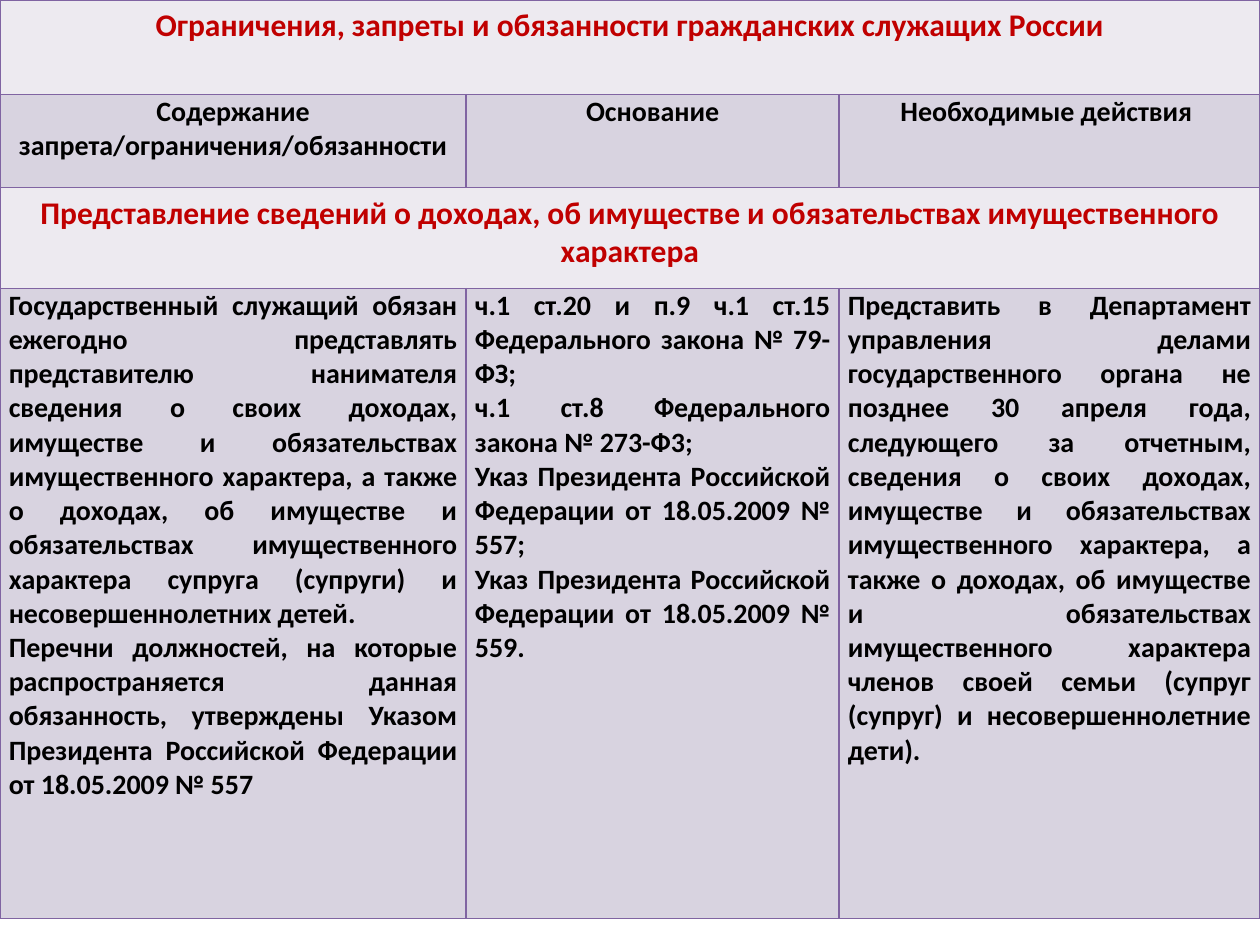
from dataclasses import dataclass

from lxml.etree import SubElement
from pptx import Presentation
from pptx.dml.color import RGBColor
from pptx.enum.text import PP_ALIGN
from pptx.oxml.ns import qn
from pptx.util import Inches, Pt

RED = RGBColor(0xC0, 0x00, 0x00)
BLACK = RGBColor(0x00, 0x00, 0x00)
PALE = RGBColor(0xED, 0xEA, 0xF0)
LILAC = RGBColor(0xD8, 0xD3, 0xE0)
PURPLE = RGBColor(0x80, 0x64, 0xA2)

WIDTHS = (3.7, 2.96, 3.34)
HEIGHTS = (0.75, 0.74, 0.8, 5)


@dataclass(frozen=True)
class Style:
    size: int
    color: RGBColor
    fill: RGBColor
    align: PP_ALIGN
    side: float
    top: float


BAND = Style(18, RED, PALE, PP_ALIGN.CENTER, 0.1, 0.05)
HEAD = Style(16, BLACK, LILAC, PP_ALIGN.CENTER, 0.07, 0)
BODY = Style(16, BLACK, LILAC, PP_ALIGN.JUSTIFY, 0.07, 0)

# A row with a single text spans the whole table.
ROWS = (
    (BAND, ("Ограничения, запреты и обязанности гражданских служащих России",)),
    (HEAD, ("Содержание запрета/ограничения/обязанности",
            "Основание",
            "Необходимые действия ")),
    (BAND, ("Представление сведений о доходах, об имуществе и обязательствах "
            "имущественного характера",)),
    (BODY, (
        "Государственный служащий обязан ежегодно представлять представителю "
        "нанимателя сведения о своих доходах, имуществе и обязательствах "
        "имущественного характера, а также о доходах, об имуществе и "
        "обязательствах имущественного характера супруга (супруги) и "
        "несовершеннолетних детей. \n"
        "Перечни должностей, на которые распространяется данная обязанность, "
        "утверждены Указом Президента Российской Федерации от 18.05.2009 № 557",
        "ч.1 ст.20 и п.9 ч.1 ст.15 Федерального закона № 79-ФЗ;\n"
        "ч.1 ст.8 Федерального закона № 273-Ф3; \n"
        "Указ Президента Российской Федерации от 18.05.2009 № 557;\n"
        "Указ Президента Российской Федерации от 18.05.2009 № 559.",
        "Представить в Департамент управления делами государственного органа "
        "не позднее 30 апреля года, следующего за отчетным, сведения о своих "
        "доходах, имуществе и обязательствах имущественного характера, а также "
        "о доходах, об имуществе и обязательствах имущественного характера "
        "членов своей семьи (супруг (супруг) и несовершеннолетние дети).")),
)


def add_border(cell) -> None:
    props = cell._tc.get_or_add_tcPr()
    for side in ("lnL", "lnR", "lnT", "lnB"):
        line = SubElement(props, qn(f"a:{side}"), w=str(Pt(1)))
        fill = SubElement(line, qn("a:solidFill"))
        SubElement(fill, qn("a:srgbClr"), val=str(PURPLE))


def paint(cell, style: Style) -> None:
    """Give a cell its border, fill and margins."""
    add_border(cell)
    cell.fill.solid()
    cell.fill.fore_color.rgb = style.fill
    cell.margin_left = cell.margin_right = Inches(style.side)
    cell.margin_top = cell.margin_bottom = Inches(style.top)


def write(cell, text: str, style: Style) -> None:
    cell.text_frame.text = text
    for para in cell.text_frame.paragraphs:
        para.alignment = style.align
        for run in para.runs:
            font = run.font
            font.name, font.size, font.bold = "Calibri", Pt(style.size), True
            font.color.rgb = style.color


def main() -> None:
    deck = Presentation()
    deck.slide_width, deck.slide_height = Inches(10), Inches(7.5)
    slide = deck.slides.add_slide(deck.slide_layouts[6])
    frame = slide.shapes.add_table(
        len(ROWS), len(WIDTHS), 0, 0, Inches(sum(WIDTHS)), Inches(sum(HEIGHTS)))
    table = frame.table
    for col, width in zip(table.columns, WIDTHS):
        col.width = Inches(width)
    for row, height, (style, texts) in zip(table.rows, HEIGHTS, ROWS):
        row.height = Inches(height)
        cells = list(row.cells)
        for cell in cells:
            paint(cell, style)
        if len(texts) == 1:
            cells[0].merge(cells[-1])
        for cell, text in zip(cells, texts):
            write(cell, text, style)
    deck.save("out.pptx")


if __name__ == "__main__":
    main()
